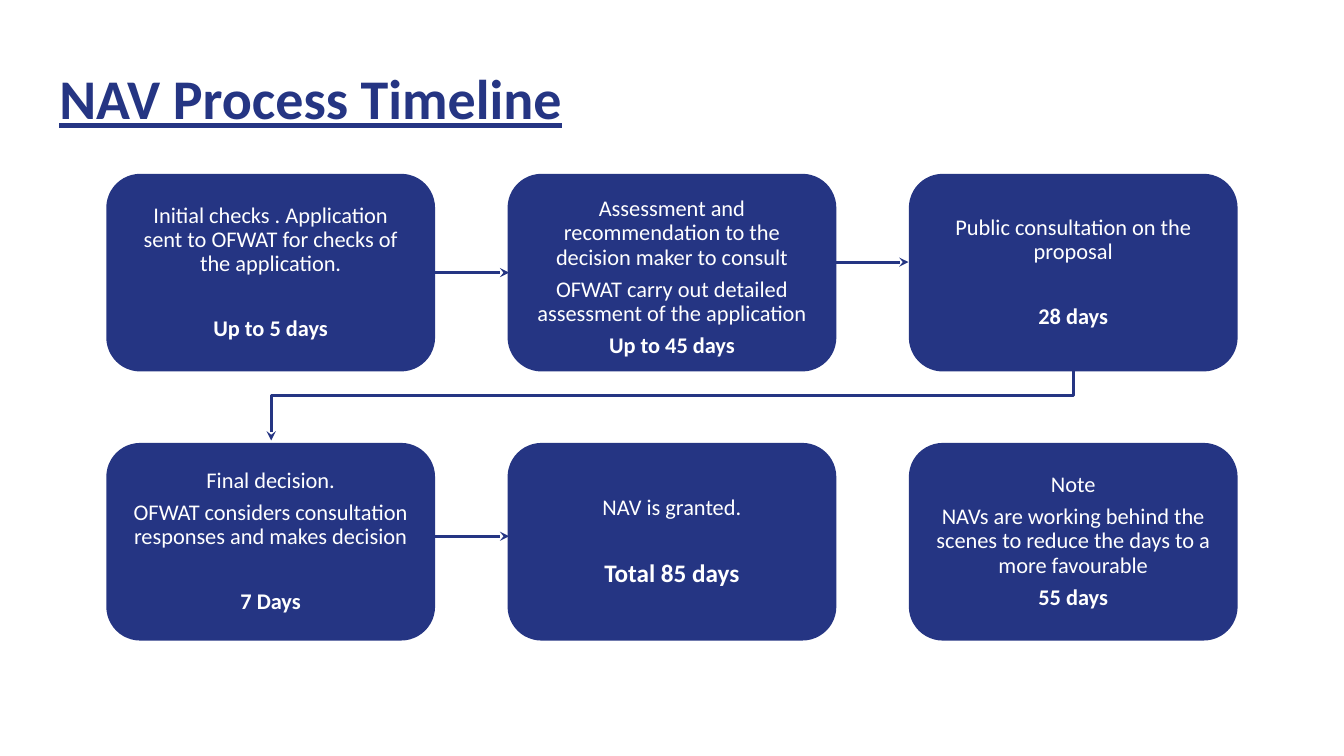
from dataclasses import dataclass

from lxml.etree import SubElement
from pptx import Presentation
from pptx.dml.color import RGBColor
from pptx.enum.shapes import MSO_CONNECTOR, MSO_SHAPE
from pptx.enum.text import MSO_ANCHOR, PP_ALIGN
from pptx.oxml.ns import qn
from pptx.util import Inches, Pt


@dataclass(frozen=True)
class Theme:
    """Colours, font and type sizes of the slide."""

    navy: RGBColor = RGBColor(0x25, 0x35, 0x83)
    white: RGBColor = RGBColor(0xFF, 0xFF, 0xFF)
    font: str = "Calibri"
    title_size: int = 40
    body_size: int = 16
    total_size: int = 18
    line_width: float = 2.25
    line_spacing: float = 0.9
    paragraph_gap: float = 5.6
    duration_gap: float = 28.8


class TimelineSlide:
    """Draws the timeline elements on one slide in one style."""

    def __init__(self, slide, theme):
        self.slide = slide
        self.theme = theme

    def style_paragraph(self, paragraph, text, size, color, bold=False):
        """Fill one paragraph and set its font."""
        paragraph.text = text
        paragraph.line_spacing = self.theme.line_spacing
        font = paragraph.font
        font.name = self.theme.font
        font.size = Pt(size)
        font.bold = bold
        font.color.rgb = color

    def style_line(self, shape):
        """Give a shape the navy outline."""
        shape.line.color.rgb = self.theme.navy
        shape.line.width = Pt(self.theme.line_width)

    def add_arrowhead(self, shape):
        """Put a stealth arrowhead at the end of a line."""
        outline = shape.element.spPr.find(qn("a:ln"))
        SubElement(outline, qn("a:tailEnd"), type="stealth")

    def title(self, text):
        """Add the underlined heading."""
        box = self.slide.shapes.add_textbox(
            Inches(0.49), Inches(0.5), Inches(5.78), Inches(1.02))
        frame = box.text_frame
        frame.word_wrap = True
        frame.vertical_anchor = MSO_ANCHOR.MIDDLE
        paragraph = frame.paragraphs[0]
        self.style_paragraph(paragraph, text, self.theme.title_size, self.theme.navy, True)
        paragraph.font.underline = True

    def step(self, left, top, lines, duration, duration_gap, duration_size, top_inset):
        """Add a rounded box with its description and duration."""
        theme = self.theme
        shape = self.slide.shapes.add_shape(
            MSO_SHAPE.ROUNDED_RECTANGLE,
            Inches(left), Inches(top), Inches(3.23), Inches(1.93))
        shape.shadow.inherit = False
        shape.fill.solid()
        shape.fill.fore_color.rgb = theme.navy
        self.style_line(shape)
        frame = shape.text_frame
        frame.word_wrap = True
        frame.vertical_anchor = MSO_ANCHOR.MIDDLE
        frame.margin_left = frame.margin_right = Inches(0.15)
        frame.margin_top = Inches(top_inset)
        frame.margin_bottom = Inches(0.05)
        for index, line in enumerate(lines):
            paragraph = frame.add_paragraph() if index else frame.paragraphs[0]
            self.style_paragraph(paragraph, line, theme.body_size, theme.white)
            paragraph.alignment = PP_ALIGN.CENTER
            if index:
                paragraph.space_before = Pt(theme.paragraph_gap)
        paragraph = frame.add_paragraph()
        self.style_paragraph(paragraph, duration, duration_size, theme.white, True)
        paragraph.alignment = PP_ALIGN.CENTER
        paragraph.space_before = Pt(duration_gap)
        return shape

    def arrow(self, left, right, height):
        """Add a horizontal arrow."""
        connector = self.slide.shapes.add_connector(
            MSO_CONNECTOR.STRAIGHT,
            Inches(left), Inches(height), Inches(right), Inches(height))
        self.style_line(connector)
        self.add_arrowhead(connector)
        SubElement(connector.element.spPr, qn("a:effectLst"))
        return connector

    def bent_arrow(self, points):
        """Add an open arrow that runs through the given points."""
        start, *rest = [(Inches(x), Inches(y)) for x, y in points]
        builder = self.slide.shapes.build_freeform(*start, scale=1.0)
        builder.add_line_segments(rest, close=False)
        shape = builder.convert_to_shape()
        shape.shadow.inherit = False
        shape.fill.background()
        self.style_line(shape)
        self.add_arrowhead(shape)


def main():
    """Build the timeline slide and save it."""
    presentation = Presentation()
    presentation.slide_width = Inches(13.33)
    presentation.slide_height = Inches(7.5)
    theme = Theme()
    slide = presentation.slides.add_slide(presentation.slide_layouts[6])
    timeline = TimelineSlide(slide, theme)
    wide, tight = theme.duration_gap, theme.paragraph_gap
    body, total = theme.body_size, theme.total_size
    steps = [
        (["Initial checks . Application sent to OFWAT for checks of the application."],
         "Up to 5 days", wide, body, 0.05),
        (["Assessment and recommendation to the decision maker to consult",
          "OFWAT carry out detailed assessment of the application"],
         "Up to 45 days", tight, body, 0.15),
        (["Public consultation on the proposal"], "28 days", wide, body, 0.05),
        (["Final decision.", "OFWAT considers consultation responses and makes decision"],
         "7 Days", wide, body, 0.05),
        (["NAV is granted."], "Total 85 days", wide, total, 0.05),
        (["Note", "NAVs are working behind the scenes to reduce the days to a more favourable"],
         "55 days", tight, body, 0.05),
    ]

    timeline.title("NAV Process Timeline")
    boxes = []
    for index, step in enumerate(steps):
        row, column = divmod(index, 3)
        boxes.append(timeline.step(1.07 + 3.98 * column, 1.74 + 2.67 * row, *step))

    first_arrow = timeline.arrow(4.3, 5.05, 2.7)
    first_arrow.begin_connect(boxes[0], 3)
    first_arrow.end_connect(boxes[1], 1)
    timeline.arrow(8.28, 9.01, 2.6)
    timeline.arrow(4.3, 5.05, 5.32)
    timeline.bent_arrow([(10.65, 3.67), (10.65, 3.92), (2.69, 3.92), (2.69, 4.37)])
    presentation.save("out.pptx")


if __name__ == "__main__":
    main()
